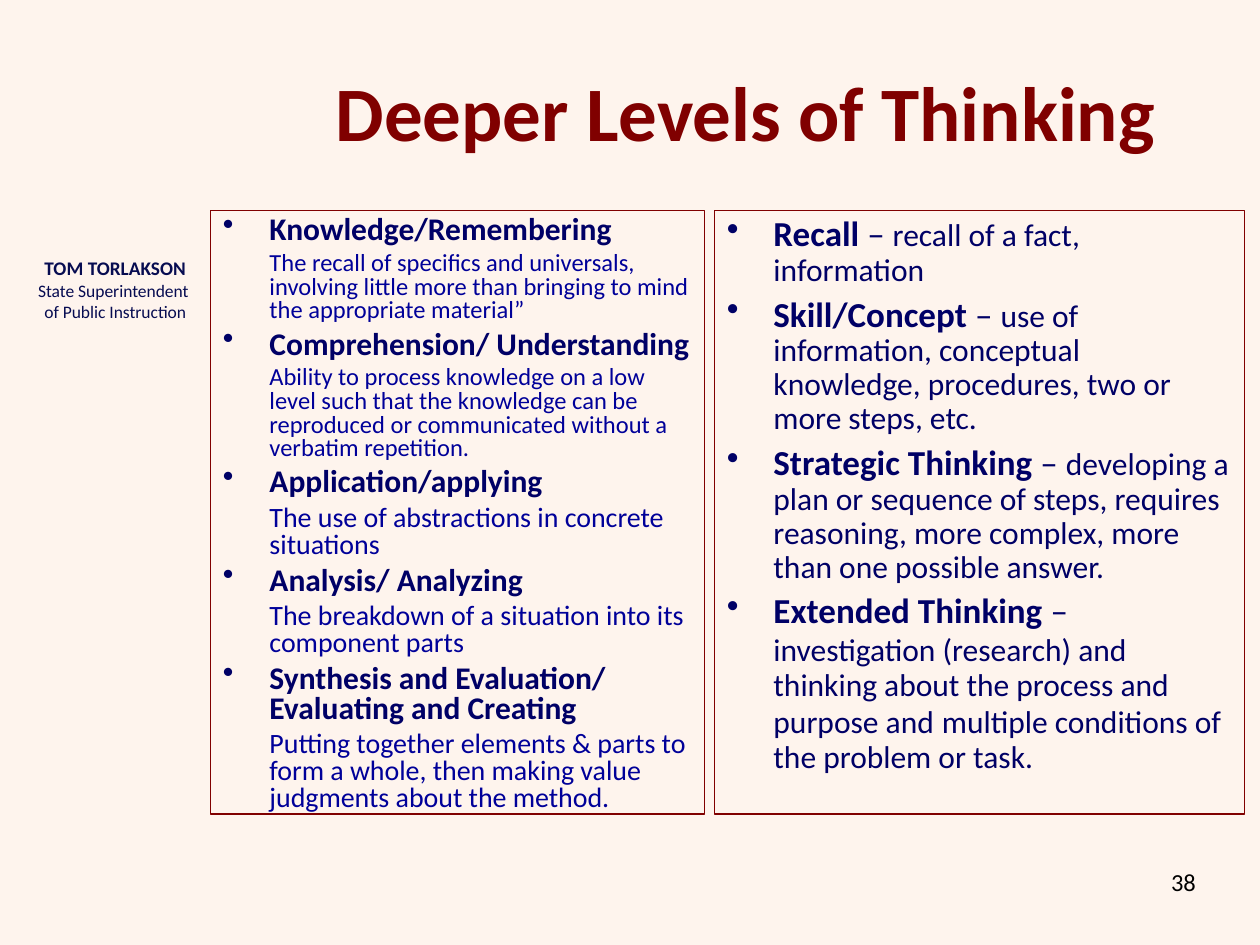
from dataclasses import dataclass

import pptx
import pptx.dml.color
import pptx.enum.text
import pptx.oxml.ns
import pptx.util
from lxml import etree

Inches = pptx.util.Inches
Align = pptx.enum.text.PP_ALIGN
Anchor = pptx.enum.text.MSO_ANCHOR


@dataclass(frozen=True)
class Theme:
    font: str = "Calibri"
    background: str = "FEF4ED"
    maroon: str = "800000"
    navy: str = "000066"
    blue: str = "000099"
    ink: str = "070C51"
    black: str = "000000"
    title: int = 44
    level: int = 20
    heading: int = 18
    detail: int = 16
    small_detail: int = 14
    number: int = 14
    name: int = 11
    office: int = 10


@dataclass(frozen=True)
class Frame:
    left: float
    top: float
    width: float
    height: float


@dataclass(frozen=True)
class Span:
    text: str
    size: int
    bold: bool = False


@dataclass(frozen=True)
class Thinking:
    heading: str
    detail: str
    detail_size: int


THEME = Theme()
INDENT = 0.37
PANEL_TOP, PANEL_HEIGHT = 1.67, 4.79


def rgb(value: str) -> pptx.dml.color.RGBColor:
    return pptx.dml.color.RGBColor.from_string(value)


def add_box(page, frame: Frame, anchor=Anchor.TOP, outlined: bool = False):
    box = page.shapes.add_textbox(Inches(frame.left), Inches(frame.top),
                                  Inches(frame.width), Inches(frame.height))
    box.text_frame.word_wrap = True
    box.text_frame.vertical_anchor = anchor
    if outlined:
        box.line.color.rgb = rgb(THEME.maroon)
        box.line.width = pptx.util.Pt(0.75)
    return box.text_frame


def next_paragraph(frame):
    """Use the empty first paragraph, then append further ones."""
    first = frame.paragraphs[0]
    return frame.add_paragraph() if first.runs else first


def write(para, spans: list[Span], color: str) -> None:
    """Fill a paragraph; what all spans share is set on the paragraph."""
    para.font.name = THEME.font
    para.font.color.rgb = rgb(color)
    shared = len({(span.size, span.bold) for span in spans}) == 1
    if shared:
        para.font.size = pptx.util.Pt(spans[0].size)
        para.font.bold = spans[0].bold
    for span in spans:
        for index, line in enumerate(span.text.split("\n")):
            if index:
                para.add_line_break()
            if not line:
                continue
            run = para.add_run()
            run.text = line
            if not shared:
                run.font.size = pptx.util.Pt(span.size)
                run.font.bold = span.bold


def add_item(frame, spans: list[Span], color: str, spacing: float,
             bullet: bool = True) -> None:
    para = next_paragraph(frame)
    para.line_spacing = spacing
    if para is not frame.paragraphs[0] and len(frame.paragraphs) > 1:
        # One fifth of the line height
        para.space_before = pptx.util.Pt(round(0.24 * spans[0].size, 1))
    properties = para._p.get_or_add_pPr()
    properties.set("marL", str(Inches(INDENT)))
    properties.set("indent", str(Inches(-INDENT if bullet else 0)))
    if bullet:
        mark = etree.SubElement(properties, pptx.oxml.ns.qn("a:buChar"))
        mark.set("char", "•")
    else:
        etree.SubElement(properties, pptx.oxml.ns.qn("a:buNone"))
    write(para, spans, color)


def add_label(page, frame: Frame, spans: list[Span], color: str,
              align, anchor=Anchor.TOP) -> None:
    para = add_box(page, frame, anchor).paragraphs[0]
    para.alignment = align
    write(para, spans, color)


LEVELS_OF_THINKING = [
    Thinking("Knowledge/Remembering",
             "The recall of specifics and universals, involving little more than "
             "bringing to mind the appropriate material”", THEME.small_detail),
    Thinking("Comprehension/ Understanding",
             "Ability to process knowledge on a low level such that the knowledge can be "
             "reproduced or communicated without a verbatim repetition.", THEME.small_detail),
    Thinking("Application/applying",
             "The use of abstractions in concrete situations", THEME.detail),
    Thinking("Analysis/ Analyzing",
             "The breakdown of a situation into its component parts", THEME.detail),
    Thinking("Synthesis and Evaluation/ Evaluating and Creating",
             "Putting together elements & parts to form a whole, then making value "
             "judgments about the method.", THEME.detail),
]

# Each level is a name and the pieces of its description
DEPTHS_OF_KNOWLEDGE = [
    ("Recall", ["recall of a fact, information"]),
    ("Skill/Concept", ["use of information, conceptual knowledge, procedures, "
                       "two or more steps, etc."]),
    ("Strategic Thinking", ["developing a plan or sequence of steps, requires reasoning, "
                            "more complex, more than one possible answer."]),
    ("Extended Thinking", ["investigation (research) and",
                           "thinking about the process and purpose and",
                           "multiple conditions of the problem or task."]),
]


def depth_spans(name: str, pieces: list[str]) -> list[Span]:
    spans = [Span(name, THEME.level, True), Span(" – ", THEME.level)]
    for index, piece in enumerate(pieces):
        if index:
            spans.append(Span(" ", THEME.level))
        spans.append(Span(piece, THEME.heading))
    return spans


def main() -> None:
    deck = pptx.Presentation()
    deck.slide_width, deck.slide_height = Inches(10), Inches(7.5)
    page = deck.slides.add_slide(deck.slide_layouts[6])
    page.background.fill.solid()
    page.background.fill.fore_color.rgb = rgb(THEME.background)

    # Superintendent's name and title
    add_label(page, Frame(0.08, 1.92, 1.67, 0.75),
              [Span("TOM TORLAKSON\n", THEME.name, True),
               Span("State Superintendent \nof Public Instruction", THEME.office)],
              THEME.ink, Align.CENTER, Anchor.MIDDLE)

    # Title
    add_label(page, Frame(2.17, 0.25, 7.5, 1.25),
              [Span("Deeper Levels of Thinking", THEME.title, True)],
              THEME.maroon, Align.CENTER, Anchor.MIDDLE)

    # Left panel: headings with details
    panel = add_box(page, Frame(1.67, PANEL_TOP, 3.92, PANEL_HEIGHT), outlined=True)
    for item in LEVELS_OF_THINKING:
        add_item(panel, [Span(item.heading, THEME.heading, True)], THEME.navy, 0.8)
        add_item(panel, [Span(item.detail, item.detail_size)], THEME.blue, 0.8, bullet=False)

    # Right panel: depths of knowledge
    panel = add_box(page, Frame(5.67, PANEL_TOP, 4.21, PANEL_HEIGHT), outlined=True)
    for name, pieces in DEPTHS_OF_KNOWLEDGE:
        add_item(panel, depth_spans(name, pieces), THEME.navy, 0.9)

    # Page number
    add_label(page, Frame(7.76, 6.83, 1.83, 0.5), [Span("38", THEME.number)],
              THEME.black, Align.RIGHT)

    deck.save("out.pptx")


if __name__ == "__main__":
    main()
